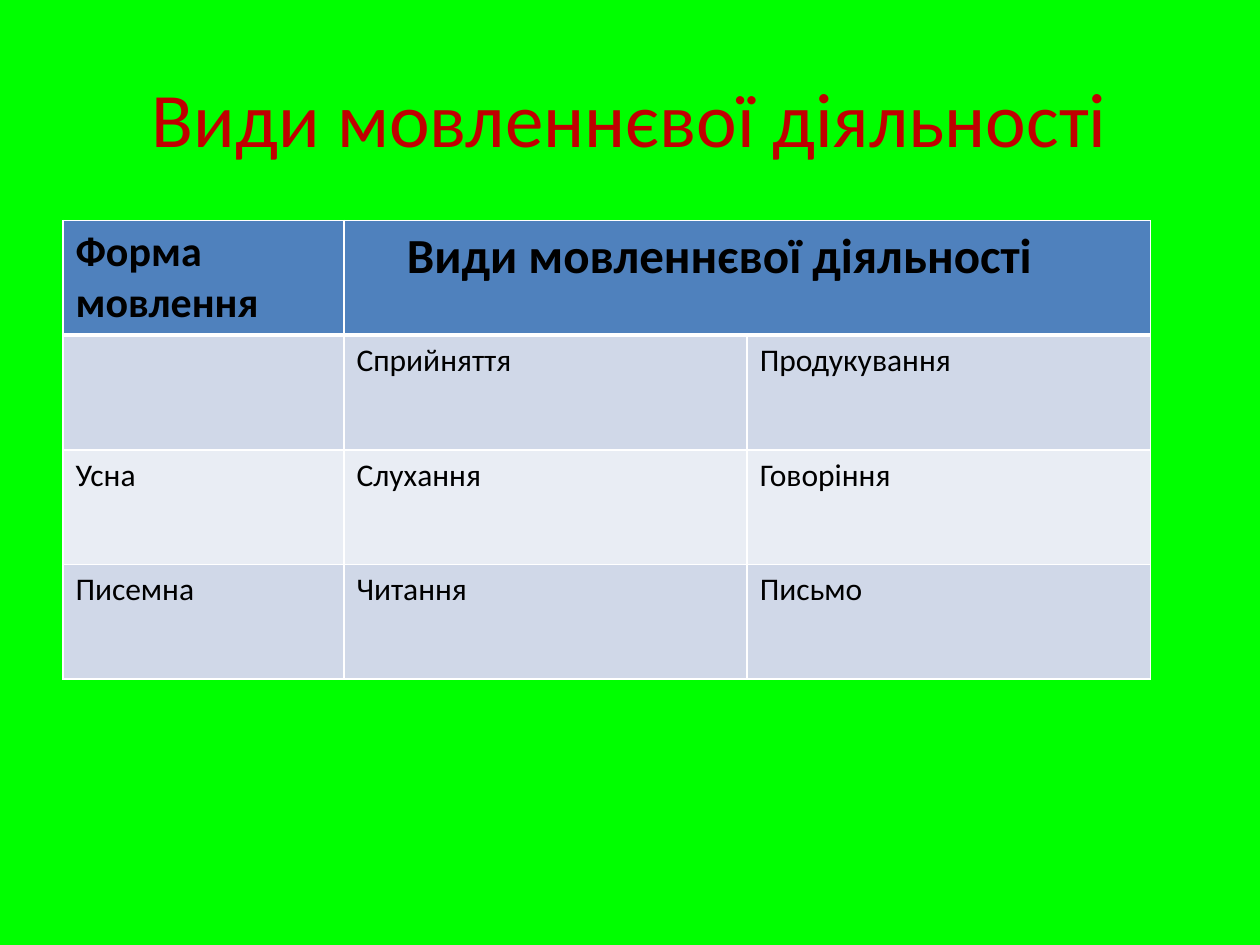
from lxml import etree
from pptx import Presentation
from pptx import util as u
from pptx.dml.color import RGBColor
from pptx.enum import text
from pptx.oxml.ns import qn

GREEN = RGBColor(0x00, 0xFF, 0x00)
RED = RGBColor(0xC0, 0x00, 0x00)
BLACK = RGBColor(0x00, 0x00, 0x00)
WHITE = RGBColor(0xFF, 0xFF, 0xFF)
BLUE = RGBColor(0x4F, 0x81, 0xBD)
BANDS = RGBColor(0xD0, 0xD8, 0xE8), RGBColor(0xE9, 0xED, 0xF4)

HEADING = "Види мовленнєвої діяльності"
SPEECH_FORMS = [
    ("Форма мовлення", HEADING, ""),
    ("", "Сприйняття", "Продукування"),
    ("Усна", "Слухання", "Говоріння"),
    ("Писемна", "Читання", "Письмо"),
]


class Deck:
    """Holds the style and the current slide, laid out on a 40 by 30 grid."""

    font = "Calibri"

    def __init__(self, width, height, background):
        self.prs = Presentation()
        self.prs.slide_width, self.prs.slide_height = u.Inches(width), u.Inches(height)
        self.slide = self.prs.slides.add_slide(self.prs.slide_layouts[6])
        self.slide.background.fill.solid()
        self.slide.background.fill.fore_color.rgb = background

    def across(self, columns):
        return round(self.prs.slide_width * columns / 40)

    def down(self, rows):
        return round(self.prs.slide_height * rows / 30)

    def add_words(self, paragraph, words, size, color, bold=False):
        run = paragraph.add_run()
        run.text = words
        run.font.name, run.font.size, run.font.bold = self.font, u.Pt(size), bold
        run.font.color.rgb = color

    def title(self, words, left, top, width, height):
        frame = self.slide.shapes.add_textbox(
            self.across(left), self.down(top), self.across(width), self.down(height)
        ).text_frame
        frame.word_wrap = True
        frame.vertical_anchor = text.MSO_ANCHOR.MIDDLE
        frame.paragraphs[0].alignment = text.PP_ALIGN.CENTER
        self.add_words(frame.paragraphs[0], words, 44, RED)

    def borders(self, cell, top, bottom):
        properties = cell._tc.get_or_add_tcPr()
        sides = {"a:lnL": 1, "a:lnR": 1, "a:lnT": top, "a:lnB": bottom}
        for place, (side, points) in enumerate(sides.items()):
            line = etree.Element(qn(side), w=str(u.Pt(points)))
            fill = etree.SubElement(line, qn("a:solidFill"))
            etree.SubElement(fill, qn("a:srgbClr"), val=str(WHITE))
            properties.insert(place, line)

    def table(self, entries, left, top, widths, row_height):
        table = self.slide.shapes.add_table(
            len(entries), len(widths), self.across(left), self.down(top),
            self.across(sum(widths)), self.down(row_height * len(entries)),
        ).table
        for column, width in zip(table.columns, widths):
            column.width = self.across(width)
        for r, entry in enumerate(entries):
            for c, words in enumerate(entry):
                cell = table.cell(r, c)
                cell.fill.solid()
                cell.fill.fore_color.rgb = BANDS[(r - 1) % 2] if r else BLUE
                self.borders(cell, 3 if r == 1 else 1, 1 if r else 3)
                if words:
                    size = 18 if r else (24, 28)[c]
                    self.add_words(cell.text_frame.paragraphs[0], words, size, BLACK, r == 0)
        return table


def main():
    deck = Deck(10, 7.5, GREEN)
    deck.title(HEADING, 2, 1.2, 36, 5)
    forms = deck.table(SPEECH_FORMS, 2, 7, (8.92, 12.8, 12.8), 3.64)
    activities = forms.cell(0, 1)
    activities.merge(forms.cell(0, 2))
    activities.margin_left = deck.across(2)
    deck.prs.save("out.pptx")


if __name__ == "__main__":
    main()
